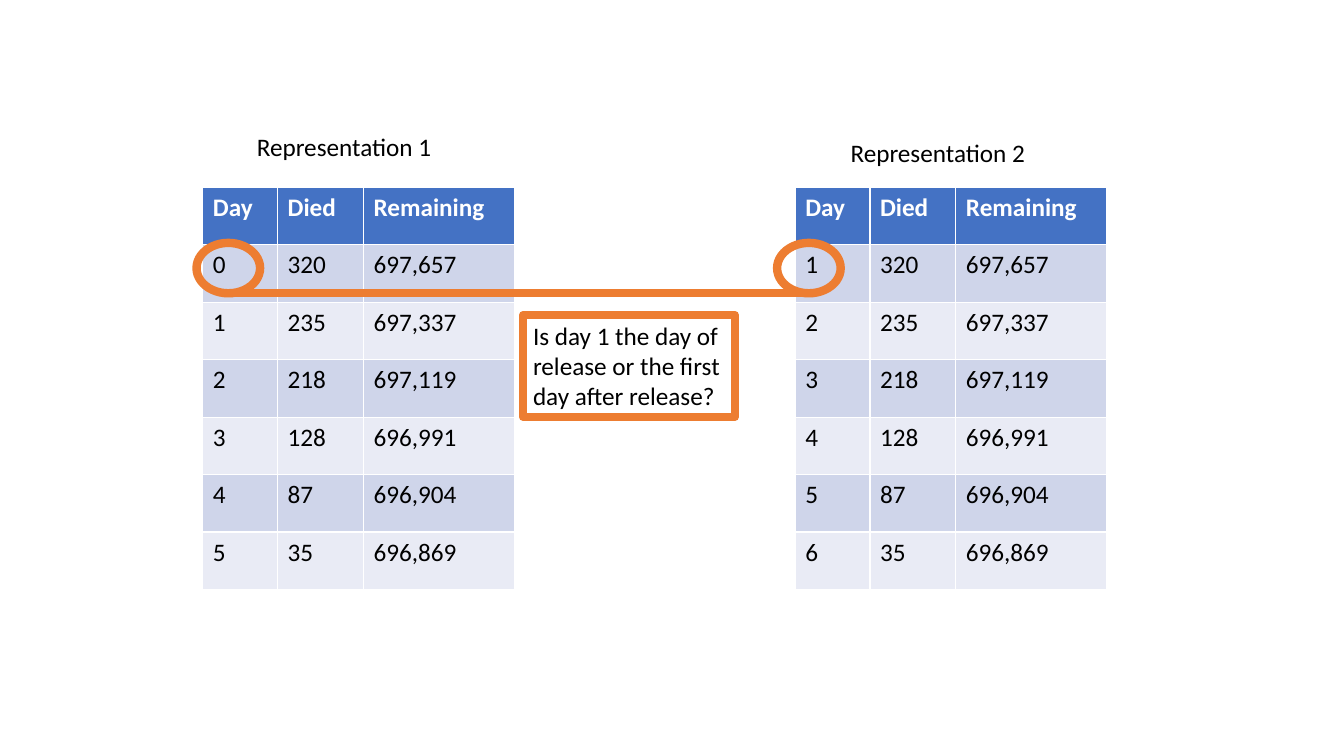
from lxml.etree import SubElement
from pptx import Presentation
from pptx.dml.color import RGBColor as RGB
from pptx.enum.shapes import MSO_CONNECTOR as LINK, MSO_SHAPE as SHAPE
from pptx.oxml.ns import qn
from pptx.util import Pt

WHITE = RGB(0xFF, 0xFF, 0xFF)
BLACK = RGB(0x00, 0x00, 0x00)
BLUE = RGB(0x44, 0x72, 0xC4)
DARK = RGB(0xCF, 0xD5, 0xEA)
LIGHT = RGB(0xE9, 0xEB, 0xF5)
ORANGE = RGB(0xED, 0x7D, 0x31)

HEADS = ["Day", "Died", "Remaining"]
DEATHS = [
    ("320", "697,657"),
    ("235", "697,337"),
    ("218", "697,119"),
    ("128", "696,991"),
    ("87", "696,904"),
    ("35", "696,869"),
]
WIDTHS = [53.4, 61.4, 108]
ROW = 41.04
TOP = 133.9
RING_W, RING_H, RING_TOP = 45.4, 36, 173.5


def style(frame, color=BLACK, bold=False):
    for par in frame.paragraphs:
        for run in par.runs:
            font = run.font
            font.name, font.size, font.bold = "Calibri", Pt(18), bold
            font.color.rgb = color


def outline(shape):
    shape.line.color.rgb = ORANGE
    shape.line.width = Pt(6)


def add_text(slide, text, left, top, width, height):
    box = slide.shapes.add_textbox(Pt(left), Pt(top), Pt(width), Pt(height))
    box.text_frame.word_wrap = True
    box.text_frame.text = text
    style(box.text_frame)
    return box


def add_days(slide, left, first):
    rows = [HEADS] + [(str(day), *pair) for day, pair in enumerate(DEATHS, first)]
    table = slide.shapes.add_table(
        len(rows), len(HEADS), Pt(left), Pt(TOP),
        Pt(sum(WIDTHS)), Pt(ROW * len(rows))).table
    for col, width in zip(table.columns, WIDTHS):
        col.width = Pt(width)
    for r, row in enumerate(rows):
        table.rows[r].height = Pt(ROW)
        for c, text in enumerate(row):
            cell = table.cell(r, c)
            cell.text_frame.text = text
            cell.fill.solid()
            cell.fill.fore_color.rgb = BLUE if r == 0 else DARK if r % 2 else LIGHT
            style(cell.text_frame, BLACK if r else WHITE, r == 0)


def add_ring(slide, left):
    ring = slide.shapes.add_shape(
        SHAPE.OVAL, Pt(left), Pt(RING_TOP), Pt(RING_W), Pt(RING_H))
    ring.shadow.inherit = False
    ring.fill.background()
    outline(ring)


def add_line(slide, start, end, y):
    line = slide.shapes.add_connector(
        LINK.STRAIGHT, Pt(start), Pt(y), Pt(end), Pt(y))
    outline(line)
    SubElement(line._element.spPr, qn("a:effectLst"))


def main():
    deck = Presentation()
    deck.slide_width, deck.slide_height = Pt(960), Pt(540)
    slide = deck.slides.add_slide(deck.slide_layouts[6])
    add_days(slide, 144.9, 0)
    add_days(slide, 568, 1)
    rings = [140.4, 555.1]
    for left in rings:
        add_ring(slide, left)
    start, end = [left + RING_W / 2 for left in rings]
    add_line(slide, start, end, RING_TOP + RING_H)
    note = add_text(
        slide, "Is day 1 the day of release or the first day after release?",
        373.7, 225, 151.2, 72.7)
    outline(note)
    add_text(slide, "Representation 1", 176.4, 90, 167.8, 29)
    add_text(slide, "Representation 2", 600.5, 94.3, 167.8, 29)
    deck.save("out.pptx")


if __name__ == "__main__":
    main()
